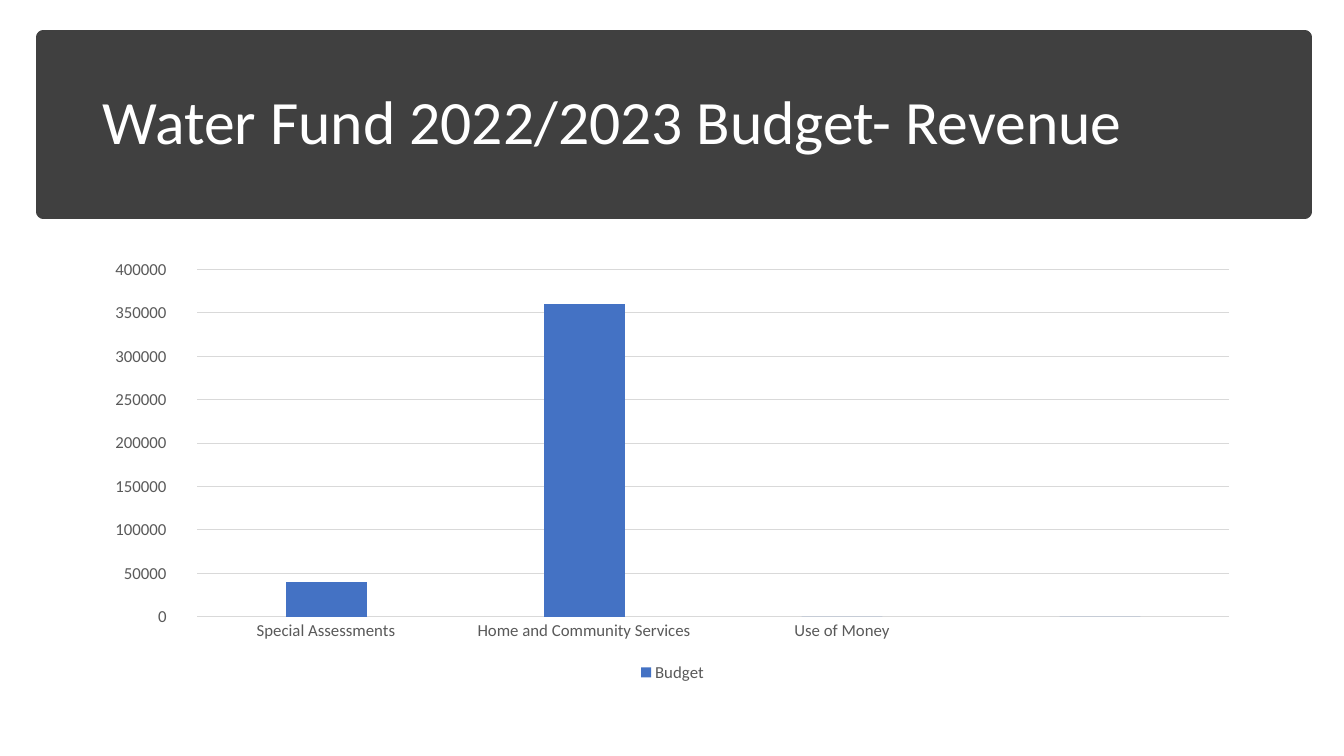
from lxml import etree
from pptx import Presentation
from pptx.chart.data import CategoryChartData
from pptx.dml.color import RGBColor
from pptx.enum.chart import XL_CHART_TYPE, XL_LEGEND_POSITION, XL_TICK_MARK
from pptx.enum.shapes import MSO_SHAPE
from pptx.enum.text import MSO_ANCHOR, PP_ALIGN
from pptx.oxml.ns import qn
from pptx.util import Inches, Pt

TITLE = "Water Fund 2022/2023 Budget- Revenue"
SERIES_NAME = "Budget"
REVENUE = [
    ("Special Assessments", 40000),
    ("Home and Community Services", 360000),
    ("Use of Money", 0),
    ("", 0),
]
AXIS_MAX, AXIS_STEP = 400000, 50000
AXIS_FORMAT = "0" + "_)" * 7
PLOT_AREA = {"x": 0.09, "y": 0.04, "w": 0.89, "h": 0.8}

FONT = "Calibri"
WHITE = RGBColor(0xFF, 0xFF, 0xFF)
BANNER_GRAY = RGBColor(0x40, 0x40, 0x40)
LABEL_GRAY = RGBColor(0x59, 0x59, 0x59)
GRID_GRAY = RGBColor(0xD9, 0xD9, 0xD9)
BAR_BLUE = RGBColor(0x44, 0x72, 0xC4)

COLUMNS = XL_CHART_TYPE.COLUMN_CLUSTERED
BOTTOM = XL_LEGEND_POSITION.BOTTOM
NO_TICK = XL_TICK_MARK.NONE
RECTANGLE = MSO_SHAPE.RECTANGLE
MIDDLE = MSO_ANCHOR.MIDDLE
LEFT = PP_ALIGN.LEFT

MARGIN, CONTENT_WIDTH = Inches(0.92), Inches(11.5)


def set_font(font, size, color):
    font.name = FONT
    font.size = Pt(size)
    font.color.rgb = color


def set_line(line, color, width):
    line.color.rgb = color
    line.width = Pt(width)


def add_banner(page):
    banner = page.shapes.add_shape(
        RECTANGLE, Inches(0.43), Inches(0.37), Inches(12.51), Inches(1.73))
    banner.shadow.inherit = False
    banner.fill.solid()
    banner.fill.fore_color.rgb = BANNER_GRAY
    set_line(banner.line, BANNER_GRAY, 10)


def add_title(page):
    box = page.shapes.add_textbox(
        MARGIN, Inches(0.51), CONTENT_WIDTH, Inches(1.45))
    frame = box.text_frame
    frame.word_wrap = True
    frame.vertical_anchor = MIDDLE
    para = frame.paragraphs[0]
    para.alignment = LEFT
    para.line_spacing = 0.9
    span = para.add_run()
    span.text = TITLE
    set_font(span.font, 44, WHITE)


def place_plot(chart):
    plot_area = chart.plots[0]._element.getparent()
    for old in plot_area.findall(qn("c:layout")):
        plot_area.remove(old)
    layout = etree.Element(qn("c:layout"))
    manual = etree.SubElement(layout, qn("c:manualLayout"))
    settings = {"layoutTarget": "inner", "xMode": "edge", "yMode": "edge"}
    for tag, value in (settings | PLOT_AREA).items():
        etree.SubElement(manual, qn("c:" + tag)).set("val", str(value))
    plot_area.insert(0, layout)


def add_revenue_chart(page):
    data = CategoryChartData()
    data.categories = [name for name, amount in REVENUE]
    data.add_series(SERIES_NAME, [amount for name, amount in REVENUE])
    chart = page.shapes.add_chart(
        COLUMNS, MARGIN, Inches(2.5), CONTENT_WIDTH, Inches(4.31), data).chart
    set_font(chart.font, 12, LABEL_GRAY)
    chart.has_title = False

    plot = chart.plots[0]
    plot.vary_by_categories = False
    plot.gap_width = 219
    plot.overlap = -27
    bars = plot.series[0]
    bars.format.fill.solid()
    bars.format.fill.fore_color.rgb = BAR_BLUE

    names, amounts = chart.category_axis, chart.value_axis
    for axis in (names, amounts):
        axis.major_tick_mark = NO_TICK
        axis.minor_tick_mark = NO_TICK
        set_font(axis.tick_labels.font, 12, LABEL_GRAY)
    set_line(names.format.line, GRID_GRAY, 0.75)
    amounts.format.line.fill.background()
    amounts.minimum_scale = 0
    amounts.maximum_scale = AXIS_MAX
    amounts.major_unit = AXIS_STEP
    amounts.has_major_gridlines = True
    set_line(amounts.major_gridlines.format.line, GRID_GRAY, 0.75)
    amounts.tick_labels.number_format = AXIS_FORMAT
    amounts.tick_labels.number_format_is_linked = False

    chart.has_legend = True
    chart.legend.position = BOTTOM
    chart.legend.include_in_layout = False
    set_font(chart.legend.font, 12, LABEL_GRAY)
    place_plot(chart)


def main():
    deck = Presentation()
    deck.slide_width, deck.slide_height = Inches(13.33), Inches(7.5)
    page = deck.slides.add_slide(deck.slide_layouts[6])
    add_banner(page)
    add_title(page)
    add_revenue_chart(page)
    deck.save("out.pptx")


if __name__ == "__main__":
    main()
